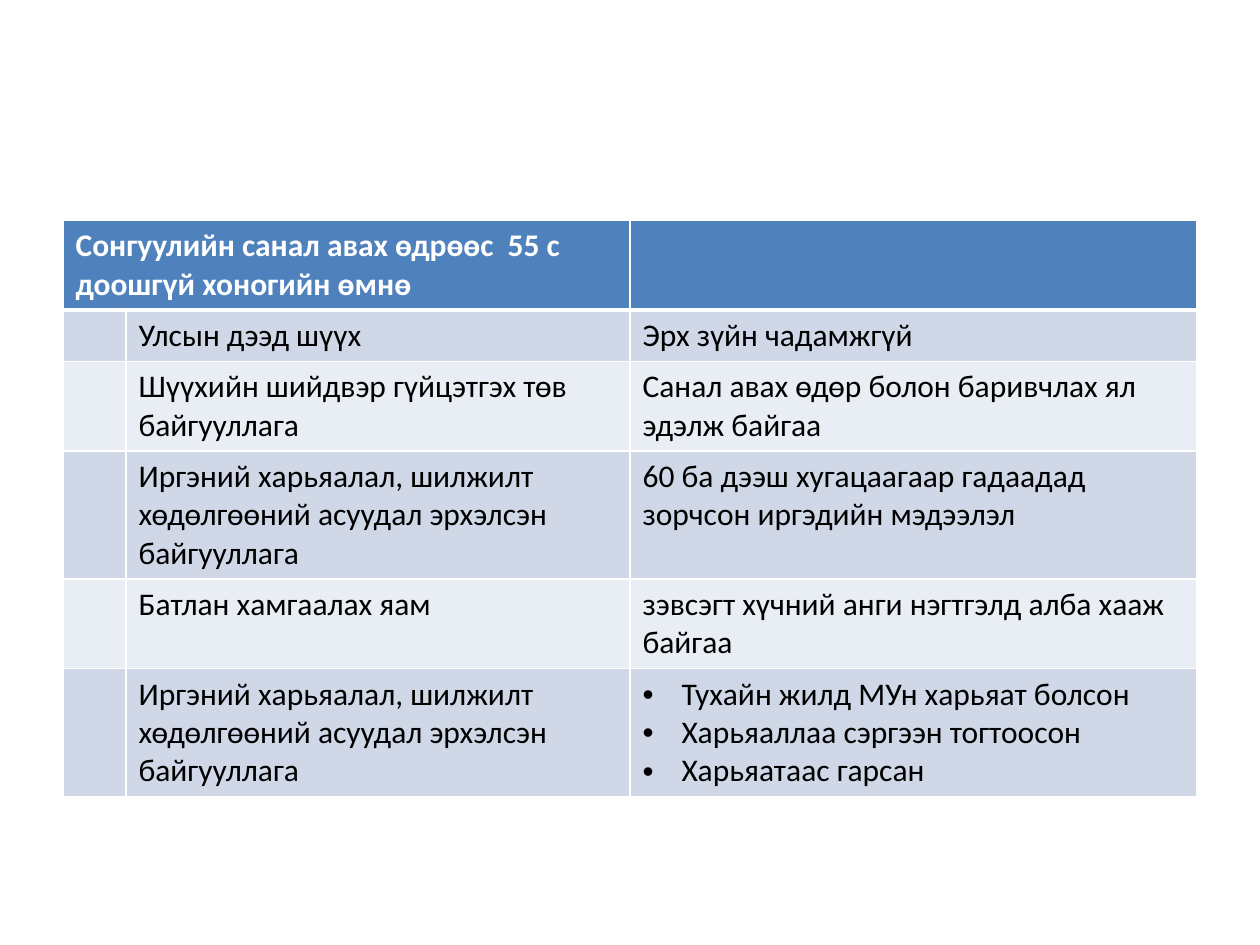
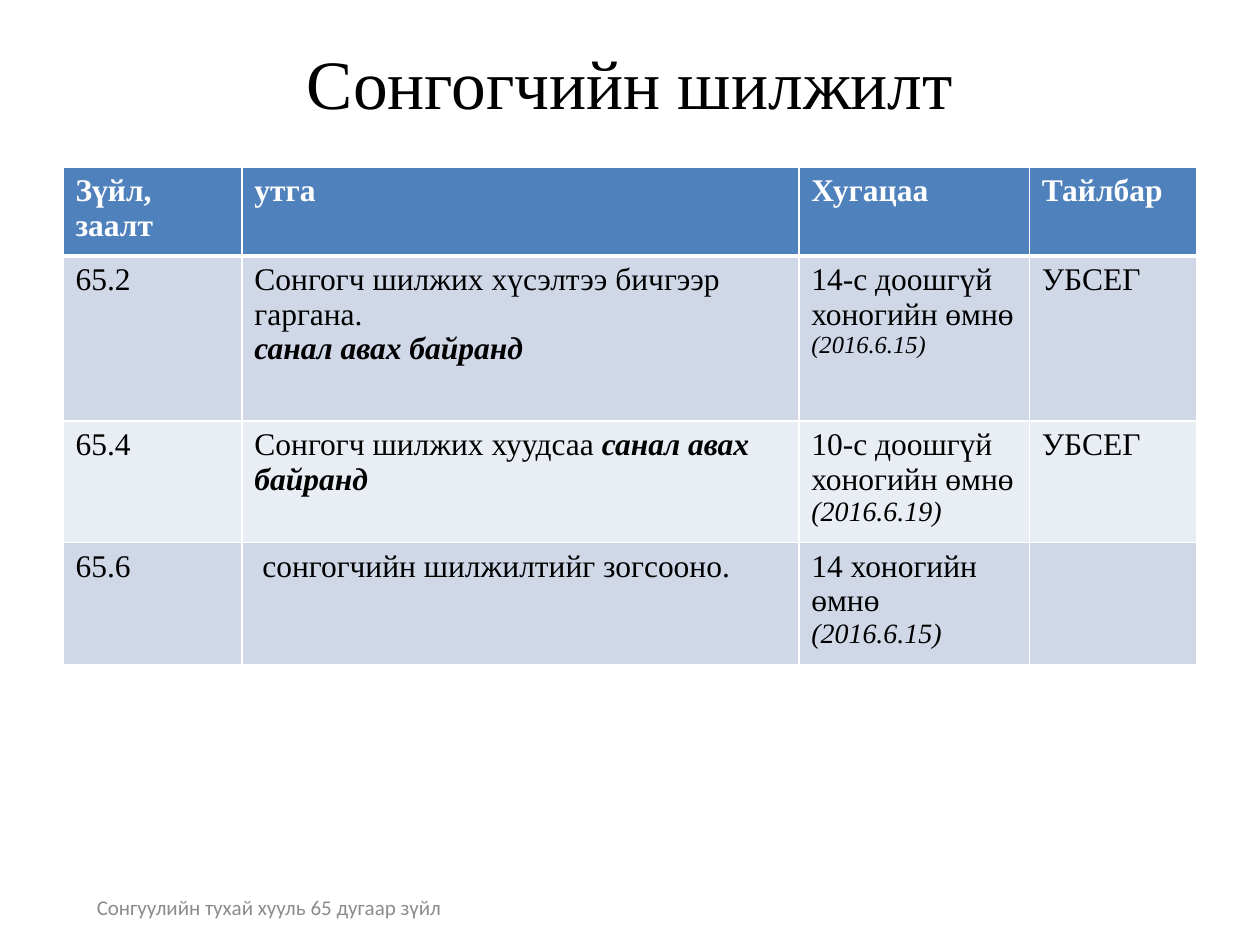
from lxml import etree
from pptx import Presentation
from pptx.dml.color import RGBColor
from pptx.enum import text
from pptx.oxml import ns
from pptx.util import Inches, Pt

WHITE, BLACK, GREY = "FFFFFF", "000000", "8C8C8C"
HEADER_FILL = "4F81BD"
BANDS = ("D0D8E8", "E9EDF4")
SANS, SERIF = "Calibri", "Times New Roman"

MIGRATION_BODY = "Иргэний харьяалал, шилжилт хөдөлгөөний асуудал эрхэлсэн байгууллага"
POLLING_PLACE = ("санал авах байранд", {"bold": True, "italic": True})

AGENCY_ROWS = [
    ["Сонгуулийн санал авах өдрөөс  55 с доошгүй хоногийн өмнө", "", ""],
    ["", "Улсын дээд шүүх", "Эрх зүйн чадамжгүй"],
    ["", "Шүүхийн шийдвэр гүйцэтгэх төв байгууллага",
     "Санал авах өдөр болон баривчлах ял эдэлж байгаа"],
    ["", MIGRATION_BODY, "60 ба дээш хугацаагаар гадаадад зорчсон иргэдийн мэдээлэл"],
    ["", "Батлан хамгаалах яам", "зэвсэгт хүчний анги нэгтгэлд алба хааж байгаа"],
    ["", MIGRATION_BODY, ""],
]
CITIZENSHIP_CHANGES = [
    "Тухайн жилд МУн харьяат болсон",
    "Харьяаллаа сэргээн тогтоосон",
    "Харьяатаас гарсан",
]


def deadline(term, date, size):
    return [[(term + " ", {}), (date, {"size": Pt(size), "italic": True})]]


TRANSFER_ROWS = [
    ["Зүйл, заалт", "утга", "Хугацаа", "Тайлбар"],
    ["65.2",
     [[("Сонгогч шилжих хүсэлтээ бичгээр гаргана.", {})], [POLLING_PLACE]],
     deadline("14-с доошгүй хоногийн өмнө", "(2016.6.15)", 14), "УБСЕГ"],
    ["65.4", [[("Сонгогч шилжих хуудсаа ", {}), POLLING_PLACE]],
     deadline("10-с доошгүй хоногийн өмнө", "(2016.6.19)", 16), "УБСЕГ"],
    ["65.6", " сонгогчийн шилжилтийг зогсооно.",
     deadline("14 хоногийн өмнө", "(2016.6.15)", 16), ""],
]


def rgb(color):
    return RGBColor.from_string(color)


def style_font(font, name, size, color, bold=False):
    font.name, font.size, font.bold = name, Pt(size), bold
    font.color.rgb = rgb(color)


def write_cell(cell, content, font, color, bold):
    paragraphs = [[(content, {})]] if isinstance(content, str) else content
    tf = cell.text_frame
    for i, runs in enumerate(paragraphs):
        p = tf.paragraphs[0] if i == 0 else tf.add_paragraph()
        for words, changes in runs:
            if not words:
                continue
            r = p.add_run()
            r.text = words
            style_font(r.font, font, 18, color, bold)
            for key, value in changes.items():
                setattr(r.font, key, value)


def set_borders(cell, top, bottom):
    tc_pr = cell._tc.get_or_add_tcPr()
    for side, width in (("L", 1), ("R", 1), ("T", top), ("B", bottom)):
        ln = etree.SubElement(tc_pr, ns.qn("a:ln" + side), w=str(Pt(width)))
        fill = etree.SubElement(ln, ns.qn("a:solidFill"))
        etree.SubElement(fill, ns.qn("a:srgbClr"), val=WHITE)


def add_bullets(cell):
    for p in cell.text_frame.paragraphs:
        p_pr = p._p.get_or_add_pPr()
        p_pr.set("marL", str(Inches(0.31)))
        p_pr.set("indent", str(-Inches(0.31)))
        etree.SubElement(p_pr, ns.qn("a:buFont"), typeface="Arial")
        etree.SubElement(p_pr, ns.qn("a:buChar"), char="•")


def add_banded_table(s, top, height, widths, heights, rows, font):
    frame = s.shapes.add_table(len(rows), len(widths), Inches(0.5), Inches(top),
                               Inches(9), Inches(height))
    table = frame.table
    for column, width in zip(table.columns, widths):
        column.width = Inches(width)
    for row, row_height in zip(table.rows, heights):
        row.height = Inches(row_height)
    frame.height = Inches(height)
    for i, contents in enumerate(rows):
        header = i == 0
        fill = HEADER_FILL if header else BANDS[(i - 1) % 2]
        for j, content in enumerate(contents):
            cell = table.cell(i, j)
            write_cell(cell, content, font, WHITE if header else BLACK, header)
            set_borders(cell, 3 if i == 1 else 1, 3 if header else 1)
            cell.fill.solid()
            cell.fill.fore_color.rgb = rgb(fill)
    return table


def add_label(s, box, words, font, size, color, align):
    sp = s.shapes.add_textbox(*map(Inches, box))
    tf = sp.text_frame
    tf.word_wrap = True
    tf.vertical_anchor = text.MSO_ANCHOR.MIDDLE
    p = tf.paragraphs[0]
    p.text = words
    p.alignment = align
    style_font(p.runs[0].font, font, size, color)


def add_agencies_slide(s):
    table = add_banded_table(s, 1.75, 4.51, (0.5, 4, 4.5), [0.41] * 6, AGENCY_ROWS, SANS)
    table.cell(0, 0).merge(table.cell(0, 1))
    last = table.cell(5, 2)
    write_cell(last, [[(change, {})] for change in CITIZENSHIP_CHANGES], SANS, BLACK, False)
    add_bullets(last)


def add_transfer_slide(s):
    add_label(s, (0.5, 0.3, 9, 0.7), "Сонгогчийн шилжилт", SERIF, 39.6, BLACK,
              text.PP_ALIGN.CENTER)
    add_banded_table(s, 1.33, 3.94, (1.42, 4.42, 1.83, 1.33), (0.53, 1.31, 0.91, 0.91),
                     TRANSFER_ROWS, SERIF)
    add_label(s, (0.67, 7, 3.83, 0.4), "Сонгуулийн тухай хууль 65 дугаар зүйл", SANS, 12,
              GREY, text.PP_ALIGN.LEFT)


def main():
    prs = Presentation()
    prs.slide_width, prs.slide_height = Inches(10), Inches(7.5)
    for build in (add_agencies_slide, add_transfer_slide):
        build(prs.slides.add_slide(prs.slide_layouts[6]))
    prs.save("out.pptx")


if __name__ == "__main__":
    main()
